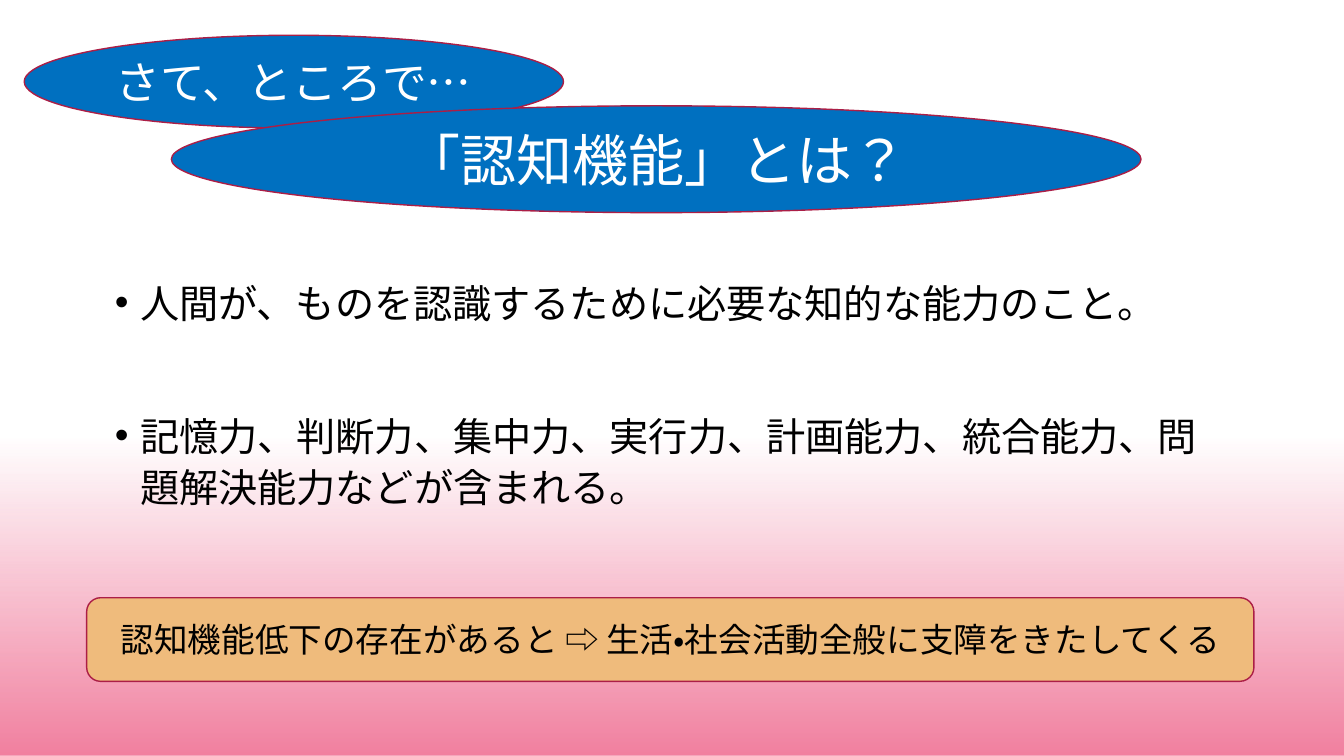
from dataclasses import dataclass

from lxml import etree
from pptx import Presentation, util as u
from pptx.dml.color import RGBColor
from pptx.enum import lang, shapes, text
from pptx.oxml import ns

BULLETS = [
    # wording, space before
    ("人間が、ものを認識するために必要な知的な能力のこと。", 10),
    ("記憶力、判断力、集中力、実行力、計画能力、統合能力、問題解決能力などが含まれる。", 58),
]
OVAL, ROUNDED = shapes.MSO_SHAPE.OVAL, shapes.MSO_SHAPE.ROUNDED_RECTANGLE
BODY_FRAME = (74.88, 192.24, 810, 176.4)
PAGE_SIZE = (960, 540)
GLOW_TOP = 276.48


@dataclass(frozen=True)
class Theme:
    font: str = "Calibri"
    black: str = "000000"
    white: str = "FFFFFF"
    blue: str = "0070C0"
    amber: str = "EFBB7C"
    crimson: str = "AB1E46"
    pink: str = "F17F9F"
    title: int = 40
    lead: int = 32
    body: int = 28
    note: int = 24


THEME = Theme()

CALLOUTS = [
    # wording, shape, frame, fill, text colour, text size
    ("認知機能低下の存在があると ⇨ 生活・社会活動全般に支障をきたしてくる", ROUNDED,
     (61.92, 426.96, 833.76, 59.76), THEME.amber, THEME.black, THEME.note),
    ("さて、ところで…", OVAL,
     (17.28, 25.2, 385.2, 66.24), THEME.blue, THEME.white, THEME.lead),
    ("「認知機能」とは？", OVAL,
     (122.4, 75.6, 692.64, 76.32), THEME.blue, THEME.white, THEME.title),
]


def rgb(colour):
    return RGBColor.from_string(colour)


def points(frame):
    return [u.Pt(length) for length in frame]


def write(para, wording, *, size, colour, align):
    para.alignment = align
    span = para.add_run()
    span.text = wording
    span.font.name = THEME.font
    span.font.size = u.Pt(size)
    span.font.color.rgb = rgb(colour)
    span.font.language_id = lang.MSO_LANGUAGE_ID.JAPANESE


def add_glow(page):
    """Fade pink in from clear over the lower half of the page."""
    width, height = PAGE_SIZE
    frame = (0, GLOW_TOP, width, height - GLOW_TOP)
    glow = page.shapes.add_shape(shapes.MSO_SHAPE.RECTANGLE, *points(frame))
    glow.shadow.inherit = False
    glow.line.fill.background()
    glow.fill.gradient()
    glow.fill.gradient_angle = 270
    for stop, position in zip(glow.fill.gradient_stops, (0.14, 1)):
        stop.position = position
        stop.color.rgb = rgb(THEME.pink)
    clear = next(glow.element.iter(ns.qn("a:srgbClr")))
    etree.SubElement(clear, ns.qn("a:alpha")).set("val", "0")


def add_body(box):
    box.left, box.top, box.width, box.height = points(BODY_FRAME)
    frame = box.text_frame
    frame.word_wrap = True
    frame.auto_size = text.MSO_AUTO_SIZE.NONE
    for index, (wording, gap) in enumerate(BULLETS):
        para = frame.add_paragraph() if index else frame.paragraphs[0]
        write(para, wording, size=THEME.body, colour=THEME.black,
              align=text.PP_ALIGN.LEFT)
        para.line_spacing = 1.1
        para.space_before = u.Pt(gap)
        props = para._p.get_or_add_pPr()
        props.set("marL", str(u.Pt(18)))
        props.set("indent", str(-u.Pt(18)))
        etree.SubElement(props, ns.qn("a:buFont")).set("typeface", "Arial")
        etree.SubElement(props, ns.qn("a:buChar")).set("char", "•")


def add_callout(page, wording, kind, frame, fill, colour, size):
    box = page.shapes.add_shape(kind, *points(frame))
    box.shadow.inherit = False
    box.fill.solid()
    box.fill.fore_color.rgb = rgb(fill)
    box.line.color.rgb = rgb(THEME.crimson)
    box.line.width = u.Pt(1)
    box.text_frame.word_wrap = True
    box.text_frame.vertical_anchor = text.MSO_ANCHOR.MIDDLE
    write(box.text_frame.paragraphs[0], wording, size=size, colour=colour,
          align=text.PP_ALIGN.CENTER)


def main():
    deck = Presentation()
    deck.slide_width, deck.slide_height = points(PAGE_SIZE)
    page = deck.slides.add_slide(deck.slide_layouts.get_by_name("Title and Content"))
    title, body = page.placeholders
    title.element.getparent().remove(title.element)
    add_glow(page)
    add_body(body)
    page.shapes.element.append(body.element)  # bring in front of the glow
    for callout in CALLOUTS:
        add_callout(page, *callout)
    deck.save("out.pptx")


if __name__ == "__main__":
    main()
